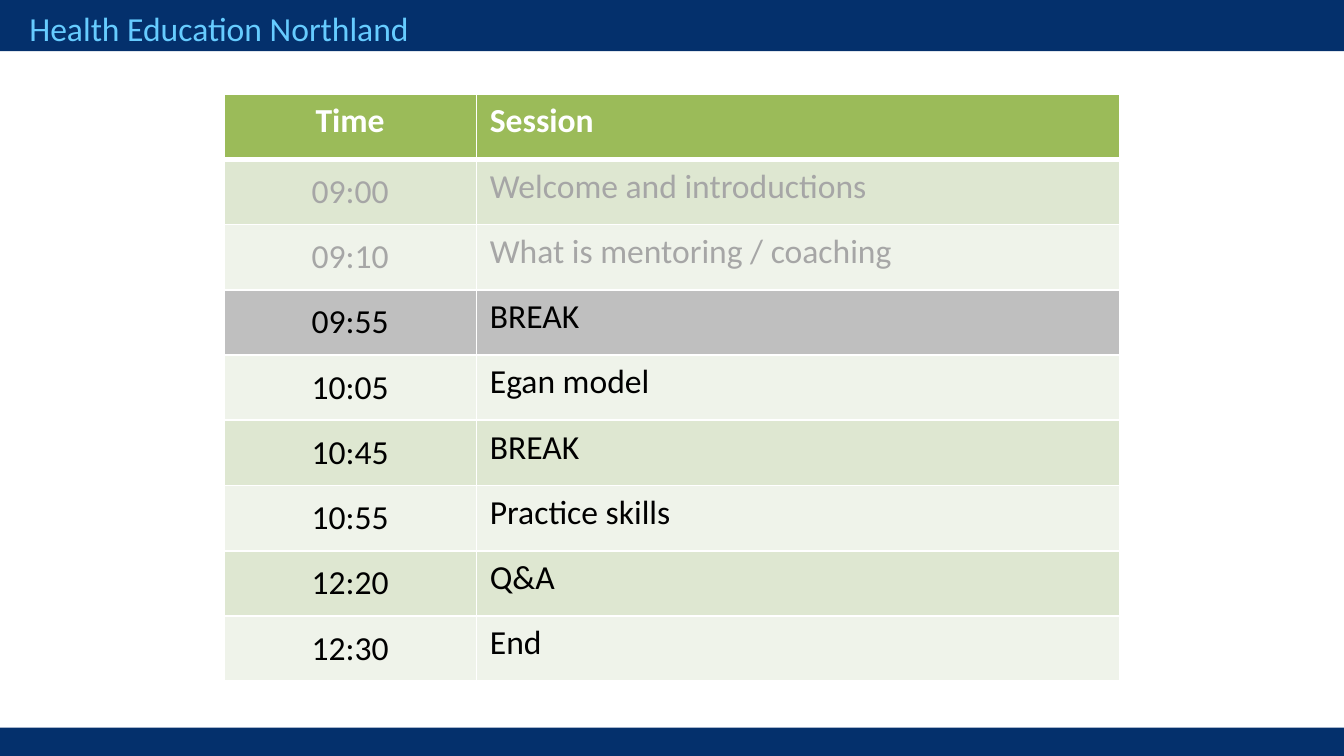
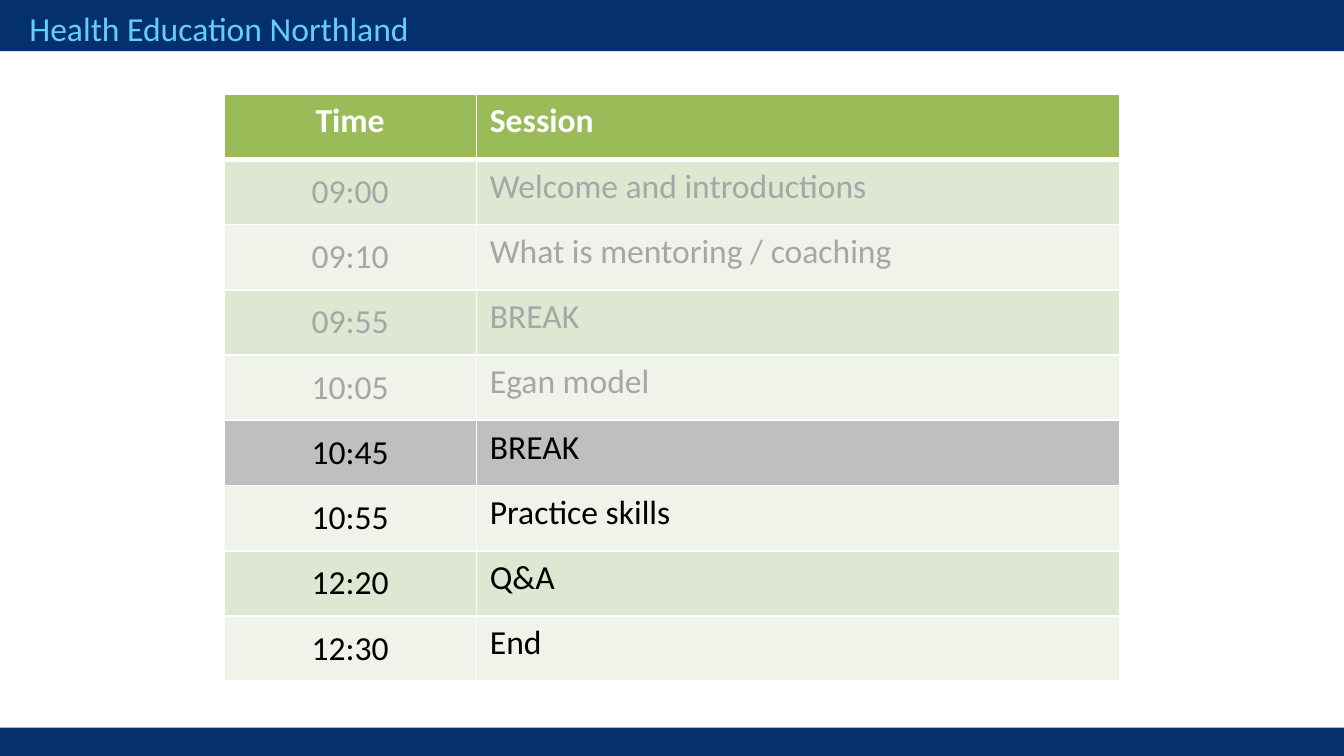
from lxml import etree
from pptx import Presentation
from pptx import util as u
from pptx.dml.color import RGBColor
from pptx.enum import shapes, text
from pptx.oxml import ns

WIDE = 10
HIGH = WIDE * 9 / 16
FONT, SIZE = "Calibri", 18
HUES = {
    "navy": "04306C", "sky": "66CCFF", "head": "9BBB59", "odd": "DEE7D1",
    "even": "EFF3EA", "now": "BFBFBF", "past": "A6A6A6", "ink": "000000",
    "white": "FFFFFF",
}
OWNER = "Health Education Northland"
HEADS = ("Time", "Session")
PLAN = [
    ("09:00", "Welcome and introductions"),
    ("09:10", "What is mentoring / coaching"),
    ("09:55", "BREAK"),
    ("10:05", "Egan model"),
    ("10:45", "BREAK"),
    ("10:55", "Practice skills"),
    ("12:20", "Q&A"),
    ("12:30", "End"),
]
BREAKS = [row for row, (_, name) in enumerate(PLAN, 1) if name == "BREAK"]
COLS = (1.88, 4.79)
TALL = 4.37


def paint(item, hue):
    item.fill.solid()
    item.fill.fore_color.rgb = RGBColor.from_string(HUES[hue])


def write(frame, words, hue, bold=False, align=text.PP_ALIGN.LEFT):
    frame.text = words
    para = frame.paragraphs[0]
    para.alignment = align
    font = para.runs[0].font
    font.name, font.size, font.bold = FONT, u.Pt(SIZE), bold
    font.color.rgb = RGBColor.from_string(HUES[hue])


def add_band(slide, top, tall):
    band = slide.shapes.add_shape(
        shapes.MSO_SHAPE.RECTANGLE, 0, u.Inches(top), u.Inches(WIDE), u.Inches(tall))
    band.shadow.inherit = False
    band.line.fill.background()
    paint(band, "navy")


def add_frame(slide):
    """Draw the bands and the owner's name that every slide carries."""
    add_band(slide, 0, 0.38)
    add_band(slide, HIGH - 0.21, 0.21)
    box = slide.shapes.add_textbox(
        u.Inches(0.12), u.Inches(0.01), u.Inches(4.25), u.Inches(0.4))
    box.text_frame.word_wrap = True
    box.text_frame.auto_size = text.MSO_AUTO_SIZE.SHAPE_TO_FIT_TEXT
    write(box.text_frame, OWNER, "sky")


def edge(cell, row):
    """Rule a cell in white, with a thick line below the header."""
    props = cell._tc.get_or_add_tcPr()
    thick = {0: "B", 1: "T"}.get(row)
    for side in "LRTB":
        width = u.Pt(3 if side == thick else 1)
        line = etree.SubElement(props, ns.qn(f"a:ln{side}"), w=str(width))
        fill = etree.SubElement(line, ns.qn("a:solidFill"))
        etree.SubElement(fill, ns.qn("a:srgbClr"), val=HUES["white"])


def look(row, now):
    """Return the fill and text colours of a row."""
    if row == 0:
        return "head", "white"
    if row == now:
        return "now", "ink"
    return ("odd" if row % 2 else "even"), ("past" if row < now else "ink")


def add_plan(slide, now):
    """Add the timetable with row `now` marked and earlier rows greyed."""
    rows = [HEADS, *PLAN]
    wide = sum(COLS)
    table = slide.shapes.add_table(
        len(rows), len(COLS), u.Inches((WIDE - wide) / 2), u.Inches(0.7),
        u.Inches(wide), u.Inches(TALL)).table
    for col, width in zip(table.columns, COLS):
        col.width = u.Inches(width)
    for r, words in enumerate(rows):
        table.rows[r].height = u.Inches(TALL / len(rows))
        fill, ink = look(r, now)
        for c, word in enumerate(words):
            cell = table.cell(r, c)
            edge(cell, r)
            paint(cell, fill)
            align = text.PP_ALIGN.LEFT if c else text.PP_ALIGN.CENTER
            write(cell.text_frame, word, ink, r == 0, align)
            if r and c == 0:
                cell.vertical_anchor = text.MSO_ANCHOR.MIDDLE


def main():
    deck = Presentation()
    deck.slide_width, deck.slide_height = u.Inches(WIDE), u.Inches(HIGH)
    for now in BREAKS:
        slide = deck.slides.add_slide(deck.slide_layouts[6])
        add_frame(slide)
        add_plan(slide, now)
    deck.save("out.pptx")


if __name__ == "__main__":
    main()
